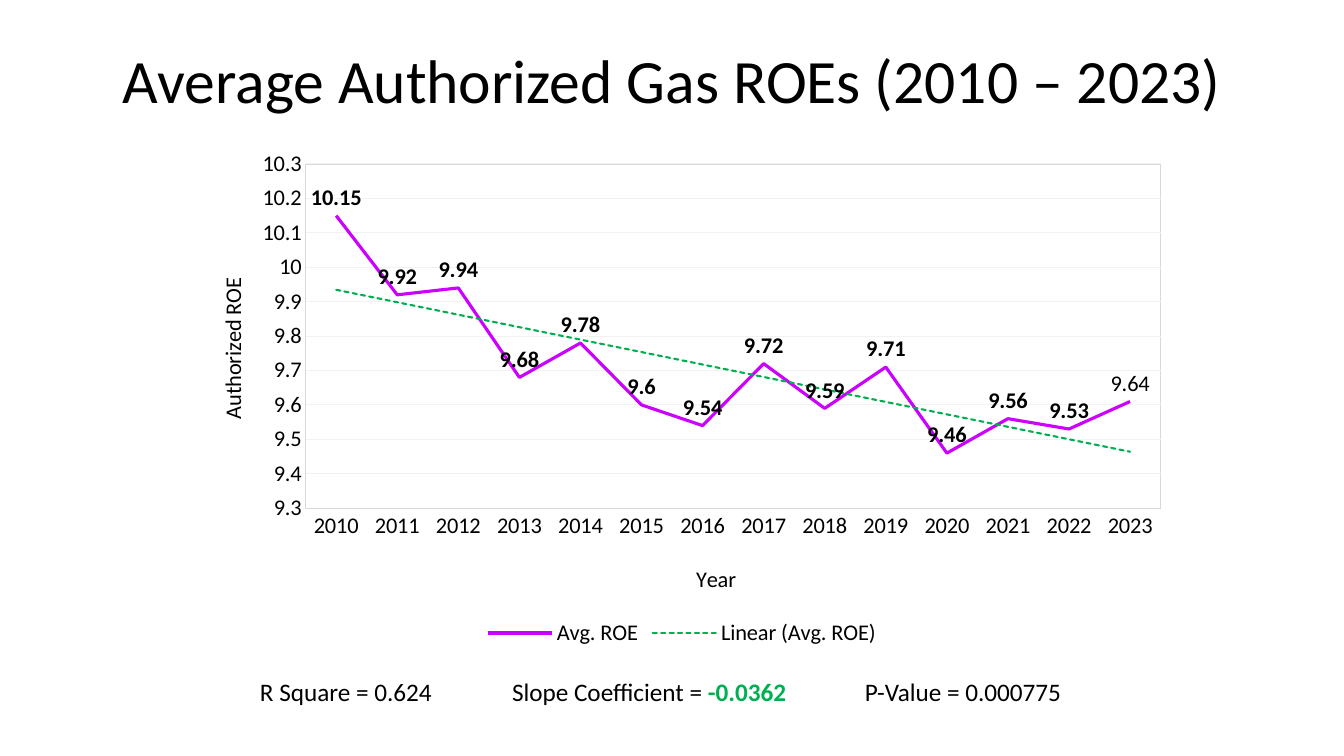
from lxml import etree
from pptx import Presentation
from pptx.chart.data import CategoryChartData
from pptx.dml.color import RGBColor
from pptx.enum.chart import XL_CHART_TYPE as ChartType, XL_LABEL_POSITION as LabelPosition
from pptx.enum.chart import XL_LEGEND_POSITION as LegendPosition, XL_TICK_MARK as TickMark
from pptx.enum.text import MSO_ANCHOR as Anchor, PP_ALIGN as Align
from pptx.oxml import parse_xml
from pptx.oxml.ns import nsdecls, qn
from pptx.util import Inches, Pt

BLACK = RGBColor(0x00, 0x00, 0x00)
GREEN = RGBColor(0x00, 0xB0, 0x50)
PURPLE = RGBColor(0xCC, 0x00, 0xFF)
AXIS_GRAY = RGBColor(0xD9, 0xD9, 0xD9)
GRID_GRAY = RGBColor(0xF2, 0xF2, 0xF2)

FIRST_YEAR = 2010
AVERAGE_ROES = [10.15, 9.92, 9.94, 9.68, 9.78, 9.6, 9.54,
                9.72, 9.59, 9.71, 9.46, 9.56, 9.53, 9.61]
LAST_LABEL = "9.64"
STATISTICS = [("R Square = 0.624 \t\tSlope Coefficient = ", {}),
              ("-0.0362", {"color": GREEN, "bold": True}),
              (" \t\tP-Value = 0.000775", {})]


def set_font(font, size, color=BLACK, bold=False):
    """Apply the slide's typeface with the given format values."""
    values = {"name": "Calibri", "size": Pt(size), "bold": bold}
    for name, value in values.items():
        setattr(font, name, value)
    font.color.rgb = color


def set_line(line, color, width):
    """Give a line its colour and width in points."""
    line.color.rgb = color
    line.width = Pt(width)


def set_layout(element, index, **fractions):
    """Place a chart part by fractions of the chart's size."""
    for previous in element.findall(qn("c:layout")):
        element.remove(previous)
    layout = parse_xml(f"<c:layout {nsdecls('c')}><c:manualLayout/></c:layout>")
    modes = {"xMode": "edge", "yMode": "edge"}
    if "w" in fractions:
        modes = {"layoutTarget": "inner", **modes}
    for name, value in {**modes, **fractions}.items():
        etree.SubElement(layout[0], qn(f"c:{name}")).set("val", str(value))
    element.insert(index, layout)


def add_text(slide, box, spans, size, anchor=Anchor.TOP, align=Align.LEFT, spacing=1.0):
    """Write one paragraph of formatted spans in a box."""
    frame = slide.shapes.add_textbox(*map(Inches, box)).text_frame
    frame.word_wrap = True
    frame.vertical_anchor = anchor
    para = frame.paragraphs[0]
    para.alignment = align
    para.line_spacing = spacing
    for text, values in spans:
        span = para.add_run()
        span.text = text
        set_font(span.font, size, **values)


def format_axis(axis, title, rotation, x, y):
    """Style an axis and place its title."""
    axis.major_tick_mark = axis.minor_tick_mark = TickMark.NONE
    set_font(axis.tick_labels.font, 16)
    frame = axis.axis_title.text_frame
    frame.text = title
    set_font(frame.paragraphs[0].runs[0].font, 16)
    element = axis.axis_title._element
    body = element.find(".//" + qn("a:bodyPr"))
    body.set("rot", str(rotation * 60000))
    body.set("vert", "horz")
    set_layout(element, 1, x=x, y=y)


def format_series(series):
    """Style the ROE line with its labels and linear trend."""
    series.smooth = False
    series.marker.style = None
    series._element.get_or_add_marker().get_or_add_symbol().set("val", "none")
    set_line(series.format.line, PURPLE, 2.25)
    labels = series.data_labels
    labels.show_value = True
    labels.position = LabelPosition.ABOVE
    set_font(labels.font, 16, bold=True)
    last = series.points[len(AVERAGE_ROES) - 1].data_label
    last.text_frame.text = LAST_LABEL
    set_font(last.text_frame.paragraphs[0].runs[0].font, 16)
    last.position = LabelPosition.ABOVE
    trend = parse_xml(
        f'<c:trendline {nsdecls("c", "a")}><c:spPr><a:ln w="{Pt(1.5)}" cap="rnd"><a:solidFill>'
        f'<a:srgbClr val="{GREEN}"/></a:solidFill><a:prstDash val="sysDash"/></a:ln></c:spPr>'
        '<c:trendlineType val="linear"/><c:dispRSqr val="0"/><c:dispEq val="0"/></c:trendline>')
    series._element.find(qn("c:cat")).addprevious(trend)


def add_roe_chart(slide, box):
    """Draw the chart of average authorized ROEs by year."""
    data = CategoryChartData()
    data.categories = [str(FIRST_YEAR + step) for step in range(len(AVERAGE_ROES))]
    data.add_series("Avg. ROE", AVERAGE_ROES)
    chart = slide.shapes.add_chart(ChartType.LINE, *map(Inches, box), data).chart
    chart.has_title = False
    set_font(chart.font, 16)
    chart.has_legend = True
    chart.legend.position = LegendPosition.BOTTOM
    chart.legend.include_in_layout = False
    set_font(chart.legend.font, 16)
    chart.plots[0].vary_by_categories = False

    years, rates = chart.category_axis, chart.value_axis
    format_axis(years, "Year", 0, 0.51, 0.82)
    set_line(years.format.line, AXIS_GRAY, 0.75)
    format_axis(rates, "Authorized ROE", -90, 0.03, 0.26)
    for name, value in {"minimum_scale": 9.3, "maximum_scale": 10.3, "major_unit": 0.1}.items():
        setattr(rates, name, value)
    rates.format.line.fill.background()
    set_line(rates.major_gridlines.format.line, GRID_GRAY, 0.75)
    rates.tick_labels.number_format = "General"
    rates.tick_labels.number_format_is_linked = False

    format_series(chart.plots[0].series[0])
    plot_area = chart._chartSpace.chart.plotArea
    set_layout(plot_area, 0, x=0.1225, y=0.045, w=0.8575, h=0.675)
    plot_area.append(parse_xml(
        f'<c:spPr {nsdecls("c", "a")}><a:solidFill><a:srgbClr val="FFFFFF"/></a:solidFill>'
        f'<a:ln w="{Pt(0.75)}"><a:solidFill><a:srgbClr val="{AXIS_GRAY}"/></a:solidFill></a:ln>'
        '</c:spPr>'))


def main():
    """Build and save the slide."""
    deck = Presentation()
    deck.slide_width, deck.slide_height = Inches(13.33), Inches(7.5)
    page = deck.slides.add_slide(deck.slide_layouts[6])
    add_text(page, (0.92, 0, 11.5, 1.65), [("Average Authorized Gas ROEs (2010 – 2023)", {})],
             44, Anchor.MIDDLE, Align.CENTER, 0.9)
    add_roe_chart(page, (1.82, 1.4, 9.89, 5.06))
    add_text(page, (2.48, 6.66, 10.31, 0.4), STATISTICS, 18)
    deck.save("out.pptx")


if __name__ == "__main__":
    main()
